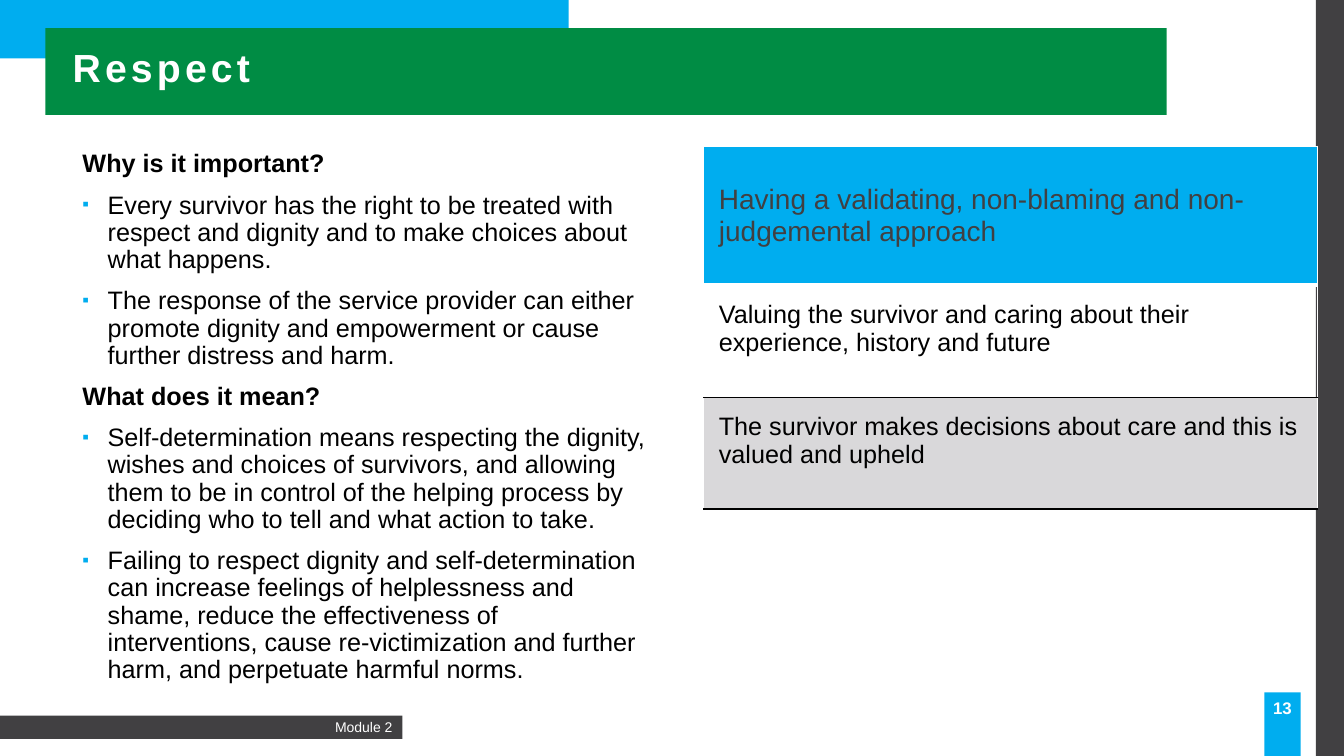
import pptx
import pptx.util
import pptx.dml.color
import pptx.enum.shapes
import pptx.enum.text
import pptx.oxml
import pptx.oxml.ns
from dataclasses import dataclass
from lxml import etree

Inches, Pt = pptx.util.Inches, pptx.util.Pt
Align, Anchor = pptx.enum.text.PP_ALIGN, pptx.enum.text.MSO_ANCHOR
qn = pptx.oxml.ns.qn


@dataclass(frozen=True)
class Theme:
    font: str = "Arial"
    blue: str = "00ADEF"
    green: str = "008C44"
    dark: str = "414042"
    gray: str = "D9D8DA"
    white: str = "FFFFFF"
    black: str = "000000"
    title: int = 28
    lead: int = 20
    body: int = 18
    page: int = 12
    foot: int = 10


theme = Theme()


def color(code):
    return pptx.dml.color.RGBColor.from_string(code)


def write(para, text, size=theme.body, ink=theme.black, bold=False,
          align=None, line=None, before=None, bullet=False, track=None):
    """Fill one paragraph with formatted text."""
    run = para.add_run()
    run.text = text
    font = run.font
    font.name, font.size, font.bold = theme.font, Pt(size), bold
    font.color.rgb = color(ink)
    if track:
        font._element.set("spc", str(track * 100))
    if align is not None:
        para.alignment = align
    if line:
        para.line_spacing = line
    if before is not None:
        para.space_before = Pt(before)
    props = para._p.get_or_add_pPr()
    if bullet:
        props.set("marL", str(Inches(0.25)))
        props.set("indent", str(-Inches(0.25)))
        tint = etree.SubElement(props, qn("a:buClr"))
        etree.SubElement(tint, qn("a:srgbClr"), val=theme.blue)
        etree.SubElement(props, qn("a:buSzPct"), val="75000")
        etree.SubElement(props, qn("a:buFont"), typeface=theme.font)
        etree.SubElement(props, qn("a:buChar"), char="▪")
    else:
        props.set("marL", "0")
        props.set("indent", "0")
        etree.SubElement(props, qn("a:buNone"))


class Page:
    def __init__(self, deck, style):
        self.style = style
        self.slide = deck.slides.add_slide(deck.slide_layouts[5])
        self.shapes = self.slide.shapes

    def bar(self, box, fill):
        kind = pptx.enum.shapes.MSO_SHAPE.RECTANGLE
        shape = self.shapes.add_shape(kind, *map(Inches, box))
        shape.shadow.inherit = False
        shape.fill.solid()
        shape.fill.fore_color.rgb = color(fill)
        shape.line.fill.background()
        return shape

    def label(self, box, fill, text, anchor, inset, **form):
        frame = self.bar(box, fill).text_frame
        frame.word_wrap = True
        frame.vertical_anchor = anchor
        frame.margin_left = frame.margin_right = Inches(inset)
        write(frame.paragraphs[0], text, ink=self.style.white, **form)

    def title(self, box, text):
        shape = self.shapes.title
        shape.left, shape.top, shape.width, shape.height = map(Inches, box)
        # Bring the title in front of its green band
        tree = shape._element.getparent()
        tree.append(shape._element)
        frame = shape.text_frame
        frame.word_wrap = True
        frame.auto_size = pptx.enum.text.MSO_AUTO_SIZE.NONE
        frame.vertical_anchor = Anchor.MIDDLE
        write(frame.paragraphs[0], text, size=self.style.title,
              ink=self.style.white, bold=True, align=Align.LEFT,
              line=0.9, before=10, track=3)

    def text(self, box, parts):
        frame = self.shapes.add_textbox(*map(Inches, box)).text_frame
        frame.word_wrap = True
        for num, (text, head) in enumerate(parts):
            para = frame.add_paragraph() if num else frame.paragraphs[0]
            write(para, text, bold=head, bullet=not head, line=0.9, before=10)

    def edges(self, cell, top, base, thick):
        props = cell._tc.get_or_add_tcPr()
        sides = (("L", self.style.white, 1), ("R", self.style.white, 1),
                 ("T", top, 1), ("B", base, thick))
        for num, (side, ink, width) in enumerate(sides):
            line = etree.Element(qn("a:ln" + side), w=str(Pt(width)))
            fill = etree.SubElement(line, qn("a:solidFill"))
            etree.SubElement(fill, qn("a:srgbClr"), val=ink)
            props.insert(num, line)

    def table(self, box, rows):
        grid = self.shapes.add_table(len(rows), 1, *map(Inches, box)).table
        grid.first_row = grid.horz_banding = False
        for num, (text, high, fill, size, ink, anchor, lines) in enumerate(rows):
            grid.rows[num].height = Inches(high)
            cell = grid.cell(num, 0)
            cell.margin_left = cell.margin_right = Inches(0.15)
            cell.margin_top = cell.margin_bottom = Inches(0.15)
            cell.vertical_anchor = anchor
            if fill:
                cell.fill.solid()
                cell.fill.fore_color.rgb = color(fill)
            else:
                cell.fill.background()
            self.edges(cell, *lines)
            write(cell.text_frame.paragraphs[0], text, size=size, ink=ink)


def main():
    deck = pptx.Presentation()
    deck.slide_width, deck.slide_height = Inches(13.33), Inches(7.5)
    page = Page(deck, theme)

    # Frame bars
    page.bar((13.05, 0, 0.28, 7.5), theme.dark)
    page.bar((0, 0, 5.64, 0.58), theme.blue)
    page.bar((0.45, 0.28, 11.12, 0.86), theme.green)

    # Footer and page number
    page.label((0, 7.1, 3.99, 0.23), theme.dark, "Module 2", Anchor.MIDDLE,
               0.1, size=theme.foot, align=Align.RIGHT)
    page.label((12.54, 6.87, 0.36, 0.63), theme.blue, "13", Anchor.TOP,
               0.04, size=theme.page, bold=True, align=Align.CENTER)

    # Title and left column
    page.title((0.62, 0.39, 9.44, 0.61), "Respect")
    page.text((0.72, 1.45, 5.84, 4.77), (
        ("Why is it important?", True),
        ("Every survivor has the right to be treated with respect and "
         "dignity and to make choices about what happens.", False),
        ("The response of the service provider can either promote dignity "
         "and empowerment or cause further distress and harm.", False),
        ("What does it mean?", True),
        ("Self-determination means respecting the dignity, wishes and "
         "choices of survivors, and allowing them to be in control of the "
         "helping process by deciding who to tell and what action to take.",
         False),
        ("Failing to respect dignity and self-determination can increase "
         "feelings of helplessness and shame, reduce the effectiveness of "
         "interventions, cause re-victimization and further harm, and "
         "perpetuate harmful norms.", False),
    ))

    # Right column table
    white, black = theme.white, theme.black
    page.table((6.98, 1.45, 6.09, 3.6), (
        ("Having a validating, non-blaming and non-judgemental approach",
         1.38, theme.blue, theme.lead, theme.dark, Anchor.MIDDLE,
         (white, white, 3)),
        ("Valuing the survivor and caring about their experience, "
         "history and future", 1.11, None, theme.body, black, Anchor.TOP,
         (white, black, 1)),
        ("The survivor makes decisions about care and this is "
         "valued and upheld", 1.11, theme.gray, theme.body, black, Anchor.TOP,
         (black, black, 1)),
    ))
    deck.save("out.pptx")


if __name__ == "__main__":
    main()
